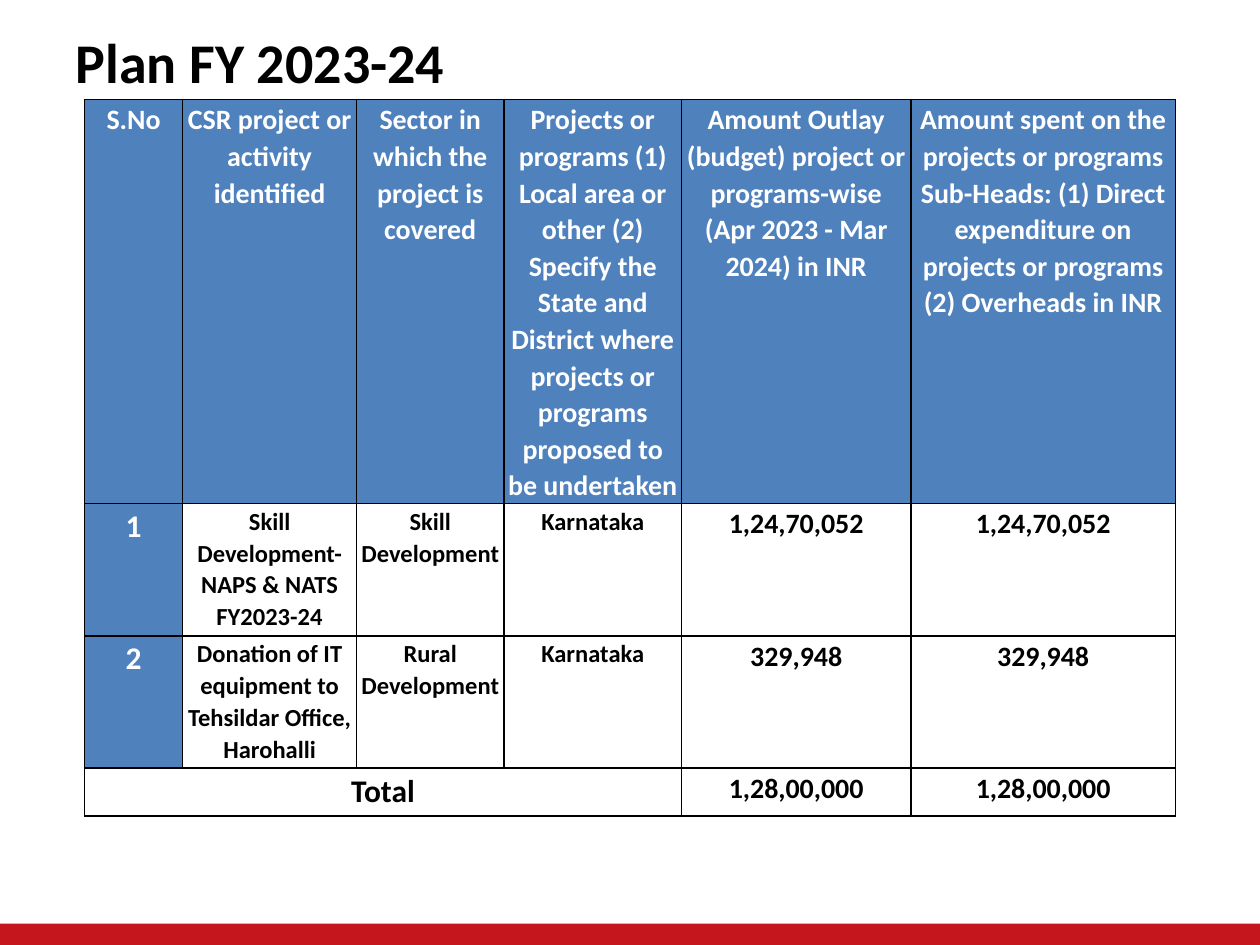
from dataclasses import dataclass

from lxml import etree
from pptx import Presentation
from pptx.dml.color import RGBColor
from pptx.enum import shapes, text
from pptx.oxml import ns
from pptx.util import Inches, Pt


@dataclass(frozen=True)
class Theme:
    font: str = "Calibri"
    black: str = "000000"
    white: str = "FFFFFF"
    blue: str = "4F81BD"
    red: str = "C4161C"
    title: int = 32
    label: int = 18
    amount: int = 16
    detail: int = 14


THEME = Theme()
COL_WIDTHS = [0.78, 1.38, 1.17, 1.41, 1.82, 2.1]
ROW_HEIGHTS = [2.7, 1.05, 1.05, 0.38]
HEADERS = [
    "S.No",
    "CSR project or activity identified",
    "Sector in which the project is covered",
    "Projects or programs (1) Local area or other (2) Specify the State and "
    "District where projects or programs proposed to be undertaken",
    "Amount Outlay (budget) project or programs-wise (Apr 2023 - Mar 2024) in INR",
    "Amount spent on the projects or programs Sub-Heads: (1) Direct expenditure "
    "on projects or programs (2) Overheads in INR",
]
PROJECTS = [
    ["1", "Skill Development- NAPS & NATS FY2023-24", "Skill Development",
     "Karnataka", "1,24,70,052", "1,24,70,052"],
    ["2", "Donation of IT equipment to Tehsildar Office, Harohalli",
     "Rural Development", "Karnataka", "329,948", "329,948"],
]
TOTAL = ["Total", "", "", "", "1,28,00,000", "1,28,00,000"]


def set_font(p, size, color):
    p.font.name = THEME.font
    p.font.size = Pt(size)
    p.font.bold = True
    p.font.color.rgb = RGBColor.from_string(color)


def add_title(s, title):
    sp = s.shapes.title
    sp.left, sp.top, sp.width, sp.height = map(Inches, (0.5, 0.17, 8.67, 0.77))
    tf = sp.text_frame
    tf.text = title
    tf.vertical_anchor = text.MSO_ANCHOR.TOP
    p = tf.paragraphs[0]
    p.alignment = text.PP_ALIGN.LEFT
    set_font(p, THEME.title, THEME.black)


def add_footer_bar(s):
    sp = s.shapes.add_shape(shapes.MSO_SHAPE.RECTANGLE, 0, Inches(7.33),
                            Inches(10), Inches(0.17))
    sp.shadow.inherit = False
    sp.fill.solid()
    sp.fill.fore_color.rgb = RGBColor.from_string(THEME.red)
    sp.line.fill.background()


def add_borders(cell):
    """Draw a thin line on each side; borders must precede the cell fill."""
    tc_pr = cell._tc.get_or_add_tcPr()
    for i, side in enumerate(("lnL", "lnR", "lnT", "lnB")):
        ln = etree.Element(ns.qn(f"a:{side}"), w=str(Pt(1)))
        fill = etree.SubElement(ln, ns.qn("a:solidFill"))
        etree.SubElement(fill, ns.qn("a:srgbClr"), val=THEME.black)
        tc_pr.insert(i, ln)


def format_cell(cell, value, size, color, fill):
    cell.margin_left = cell.margin_right = Inches(0.02)
    cell.margin_top, cell.margin_bottom = Inches(0.01), 0
    cell.fill.solid()
    cell.fill.fore_color.rgb = RGBColor.from_string(fill)
    add_borders(cell)
    cell.text = value
    p = cell.text_frame.paragraphs[0]
    p.alignment = text.PP_ALIGN.CENTER
    p.line_spacing = 1.07
    p.space_after = Pt(8)
    set_font(p, size, color)


def cell_style(row, col, last_row):
    """Return type size, text colour and fill for a place in the table."""
    if row == 0:
        return THEME.amount, THEME.white, THEME.blue
    if col >= 4:
        return THEME.amount, THEME.black, THEME.white
    if row == last_row:
        return THEME.label, THEME.black, THEME.white
    if col == 0:
        return THEME.label, THEME.white, THEME.blue
    return THEME.detail, THEME.black, THEME.white


def add_plan_table(s, rows):
    last = len(rows) - 1
    table = s.shapes.add_table(
        len(rows), len(COL_WIDTHS), Inches(0.67), Inches(0.79),
        Inches(sum(COL_WIDTHS)), Inches(sum(ROW_HEIGHTS))).table
    table.horz_banding = False
    for column, width in zip(table.columns, COL_WIDTHS):
        column.width = Inches(width)
    for row, height in zip(table.rows, ROW_HEIGHTS):
        row.height = Inches(height)
    for r, values in enumerate(rows):
        for c, value in enumerate(values):
            format_cell(table.cell(r, c), value, *cell_style(r, c, last))
    # The total label runs under all the descriptive columns
    table.cell(last, 0).merge(table.cell(last, 3))


def main():
    prs = Presentation()
    prs.slide_width, prs.slide_height = Inches(10), Inches(7.5)
    s = prs.slides.add_slide(prs.slide_layouts[5])
    add_footer_bar(s)
    add_plan_table(s, [HEADERS, *PROJECTS, TOTAL])
    add_title(s, "Plan FY 2023-24")
    prs.save("out.pptx")


if __name__ == "__main__":
    main()
